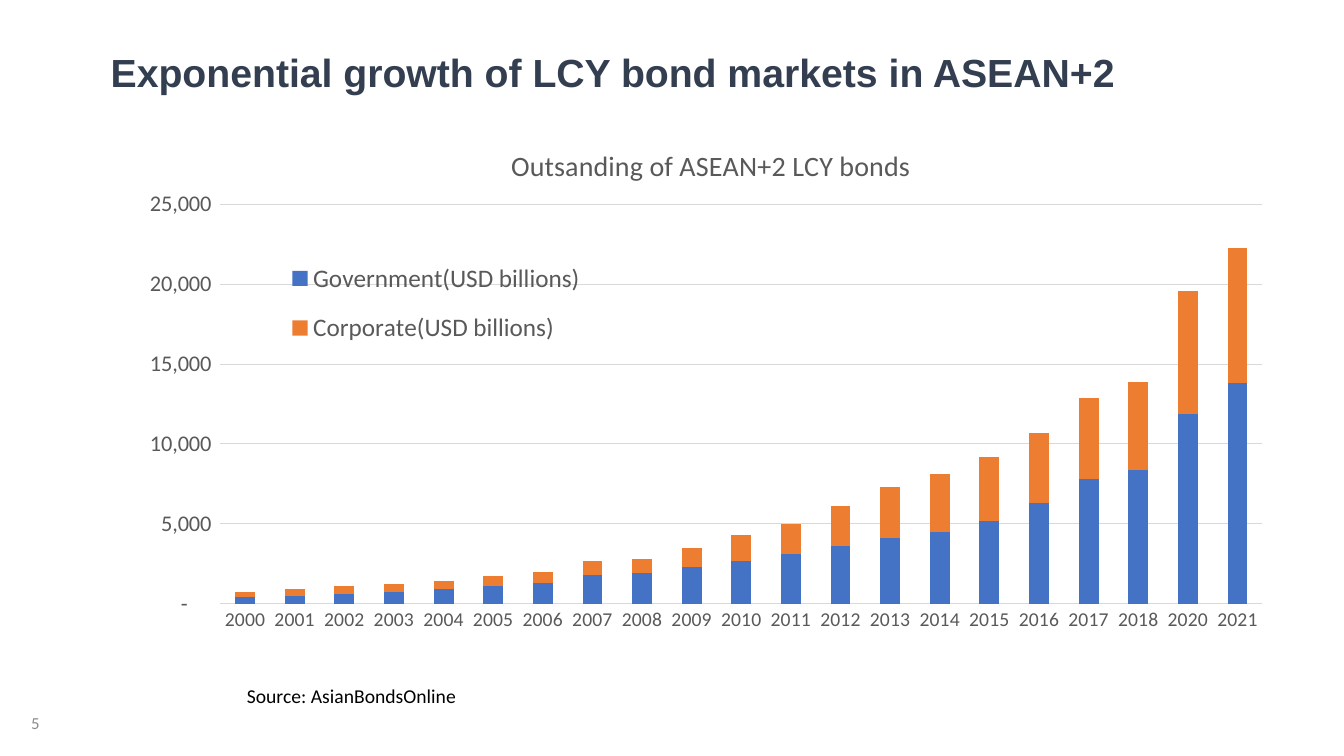
"""Build the slide on the growth of local currency bond markets in ASEAN+2."""
from dataclasses import dataclass

import lxml.etree
import pptx
import pptx.chart.data
import pptx.dml.color
import pptx.enum.chart
import pptx.enum.text
import pptx.oxml.ns
import pptx.util

Inches = pptx.util.Inches
RGBColor = pptx.dml.color.RGBColor
qn = pptx.oxml.ns.qn

NAVY = RGBColor(0x33, 0x3F, 0x50)
PAGE_GRAY = RGBColor(0x8C, 0x8C, 0x8C)
BLACK = RGBColor(0, 0, 0)
CHART_GRAY = RGBColor(0x59, 0x59, 0x59)
GRID_GRAY = RGBColor(0xD9, 0xD9, 0xD9)
BLUE = RGBColor(0x44, 0x72, 0xC4)
ORANGE = RGBColor(0xED, 0x7D, 0x31)

YEARS = [str(year) for year in range(2000, 2022) if year != 2019]
NUMBER_FORMAT = '_(* #,##0_);_(* \\(#,##0\\);_(* "-"??_);_('


@dataclass(frozen=True)
class Label:
    text: str
    left: float
    top: float
    width: float
    height: float
    size: int
    color: RGBColor
    font: str = "Calibri"
    bold: bool = False
    middle: bool = True


@dataclass(frozen=True)
class BondSeries:
    name: str
    color: RGBColor
    values: tuple[int, ...]


LABELS = (
    Label("Exponential growth of LCY bond markets in ASEAN+2",
          1, 0.26, 12.17, 0.91, 28, NAVY, "Arial", True),
    Label("5", 0.21, 6.97, 3, 0.4, 12, PAGE_GRAY),
    Label("Source: AsianBondsOnline", 2.35, 6.74, 6.18, 0.34, 14, BLACK, middle=False),
)

BONDS = (
    BondSeries("Government(USD billions)", BLUE, (
        400, 500, 600, 700, 900, 1100, 1300, 1800, 1900, 2300, 2700,
        3100, 3600, 4100, 4500, 5200, 6300, 7800, 8400, 11900, 13800)),
    BondSeries("Corporate(USD billions)", ORANGE, (
        300, 400, 500, 500, 500, 600, 700, 900, 900, 1200, 1600,
        1900, 2500, 3200, 3600, 4000, 4400, 5100, 5500, 7700, 8500)),
)


def style_font(font, size: int, color: RGBColor, name: str = "Calibri", bold: bool = False) -> None:
    """Set the size, colour, typeface and weight of a font."""
    font.size = pptx.util.Pt(size)
    font.color.rgb = color
    font.name = name
    font.bold = bold


def add_label(slide, label: Label) -> None:
    """Add one text box with a single run."""
    shape = slide.shapes.add_textbox(
        Inches(label.left), Inches(label.top), Inches(label.width), Inches(label.height))
    frame = shape.text_frame
    frame.word_wrap = True
    anchors = pptx.enum.text.MSO_ANCHOR
    frame.vertical_anchor = anchors.MIDDLE if label.middle else anchors.TOP
    run = frame.paragraphs[0].add_run()
    run.text = label.text
    style_font(run.font, label.size, label.color, label.font, label.bold)


def place_part(chart, part_name: str, index: int, **fractions: float) -> None:
    """Place a chart part at fractions of the chart's width and height."""
    part = chart.element.find(f".//{qn(part_name)}")
    for old_layout in part.findall(qn("c:layout")):
        part.remove(old_layout)
    layout = lxml.etree.Element(qn("c:layout"))
    manual = lxml.etree.SubElement(layout, qn("c:manualLayout"))
    if part_name == "c:plotArea":
        lxml.etree.SubElement(manual, qn("c:layoutTarget"), val="inner")
    for axis in ("x", "y"):
        lxml.etree.SubElement(manual, qn(f"c:{axis}Mode"), val="edge")
    for key, fraction in fractions.items():
        lxml.etree.SubElement(manual, qn(f"c:{key}"), val=str(fraction))
    part.insert(index, layout)


def style_axes(chart) -> None:
    """Format the axes and gridlines."""
    for axis, size in ((chart.category_axis, 14), (chart.value_axis, 16)):
        axis.major_tick_mark = pptx.enum.chart.XL_TICK_MARK.NONE
        axis.minor_tick_mark = pptx.enum.chart.XL_TICK_MARK.NONE
        style_font(axis.tick_labels.font, size, CHART_GRAY)
    value_axis = chart.value_axis
    value_axis.minimum_scale = 0
    value_axis.maximum_scale = 25000
    value_axis.major_unit = 5000
    value_axis.tick_labels.number_format = NUMBER_FORMAT
    value_axis.tick_labels.number_format_is_linked = False
    value_axis.format.line.fill.background()
    for line in (chart.category_axis.format.line, value_axis.major_gridlines.format.line):
        line.color.rgb = GRID_GRAY
        line.width = pptx.util.Pt(0.75)


def add_bond_chart(slide) -> None:
    """Add the stacked columns of outstanding bonds."""
    data = pptx.chart.data.CategoryChartData(number_format=NUMBER_FORMAT)
    data.categories = YEARS
    for bond in BONDS:
        data.add_series(bond.name, bond.values)
    chart = slide.shapes.add_chart(
        pptx.enum.chart.XL_CHART_TYPE.COLUMN_STACKED,
        Inches(1.21), Inches(1.17), Inches(11.54), Inches(5.69), data).chart
    style_font(chart.font, 10, BLACK)

    chart.has_title = True
    run = chart.chart_title.text_frame.paragraphs[0].add_run()
    run.text = "Outsanding of ASEAN+2 LCY bonds"
    style_font(run.font, 20, CHART_GRAY)

    chart.has_legend = True
    chart.legend.position = pptx.enum.chart.XL_LEGEND_POSITION.BOTTOM
    chart.legend.include_in_layout = False
    style_font(chart.legend.font, 18, CHART_GRAY)

    plot = chart.plots[0]
    plot.gap_width = 150
    plot.overlap = 100
    plot.vary_by_categories = False
    for series, bond in zip(plot.series, BONDS):
        series.format.fill.solid()
        series.format.fill.fore_color.rgb = bond.color
    style_axes(chart)

    place_part(chart, "c:title", 1, x=0.33, y=0.04)
    place_part(chart, "c:plotArea", 0, x=0.0845, y=0.151, w=0.8956, h=0.696)
    place_part(chart, "c:legend", 1, x=0.13, y=0.22, w=0.28, h=0.206)


def main() -> None:
    """Create and save the presentation."""
    presentation = pptx.Presentation()
    presentation.slide_width = Inches(13.33)
    presentation.slide_height = Inches(7.5)
    slide = presentation.slides.add_slide(presentation.slide_layouts[6])
    add_bond_chart(slide)
    for label in LABELS:
        add_label(slide, label)
    presentation.save("out.pptx")


if __name__ == "__main__":
    main()
